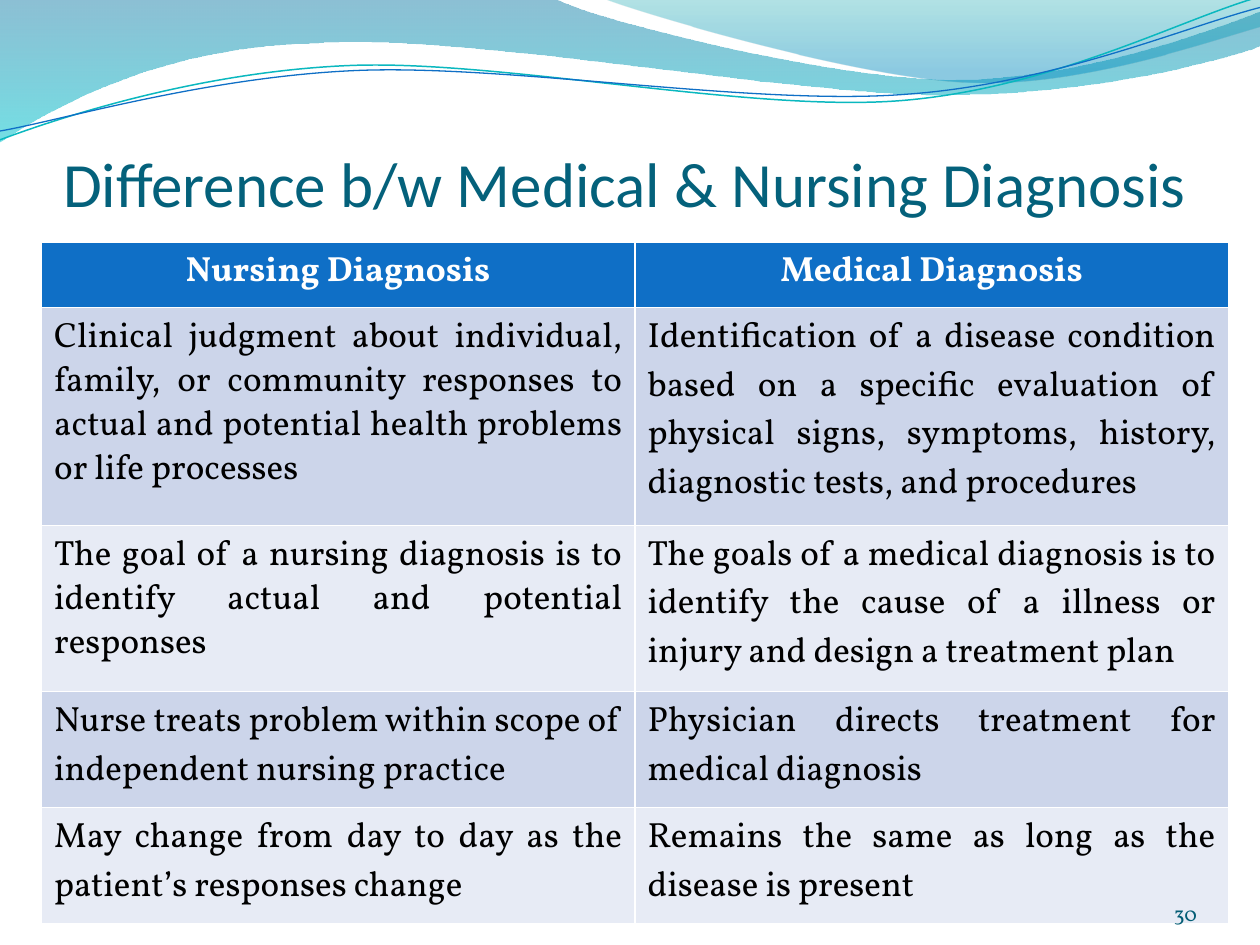
from math import cos, radians, sin

from lxml.etree import SubElement
from pptx import Presentation
from pptx.dml.color import RGBColor
from pptx.enum.text import MSO_ANCHOR, MSO_AUTO_SIZE, PP_ALIGN
from pptx.oxml import parse_xml
from pptx.oxml.ns import nsdecls, qn
from pptx.util import Inches, Pt

COLORS = {
    "title": "04617B", "header": "0F6FC6", "odd": "CCD5EA", "even": "E7EBF5",
    "white": "FFFFFF", "black": "000000", "number": "045D75",
    "teal_line": "0AB8BF", "blue_line": "0F6FC6",
    "deep": "0074A1", "aqua": "00C6CF", "sea": "00A1A9", "sky": "008BBF",
}

LEFT_WAVE = [
    (0, 0), (4.4, -0.01), (4.76, 0.17, 6.64, 0.63, 7.58, 0.63),
    (8.53, 0.63, 9.58, 0.26, 10, 0.09), (10.01, 0.36),
    (9.83, 0.44, 8.7, 0.76, 7.46, 0.75), (6.22, 0.75, 3.82, 0.28, 2.57, 0.34),
    (1.29, 0.36, 0.46, 0.83, -0.01, 1.13), (0, 0),
]
RIGHT_WAVE = [
    (4.79, -0.01), (5.09, 0.11, 6.82, 0.62, 7.69, 0.65),
    (8.56, 0.69, 9.61, 0.32, 10, 0.21), (10, 0), (4.79, -0.01),
]
TEAL_CURVE = [
    (0, 1.11), (0.48, 0.93, 1.58, 0.57, 2.77, 0.52),
    (3.95, 0.47, 5.93, 0.89, 7.13, 0.8), (8.33, 0.71, 9.38, 0.15, 9.98, -0.02),
]
BLUE_CURVE = [
    (0, 1.04), (0.47, 0.96, 1.64, 0.61, 2.83, 0.56),
    (4.03, 0.51, 5.97, 0.84, 7.17, 0.75), (8.36, 0.67, 9.41, 0.21, 10, 0.06),
]
CURVE_TILT = 2.7

HEADINGS = ["Nursing Diagnosis", "Medical Diagnosis"]
COMPARISONS = [
    ["Clinical judgment about individual, family, or community responses to actual and potential health problems or life processes",
     "Identification of a disease condition based on a specific evaluation of physical signs, symptoms, history, diagnostic tests, and procedures"],
    ["The goal of a nursing diagnosis is to identify actual and potential responses",
     "The goals of a medical diagnosis is to identify the cause of a illness or injury and design a treatment plan"],
    ["Nurse treats problem within scope of independent nursing practice",
     "Physician directs treatment for medical diagnosis"],
    ["May change from day to day as the patient’s responses change",
     "Remains the same as long as the disease is present"],
]
ROW_HEIGHTS = [0.52, 1.73, 1.32, 0.92, 0.92]
TIGHT_CELLS = {(1, 0), (2, 0)}


def turn(point, center, degrees):
    angle = radians(degrees)
    across, down = point[0] - center[0], point[1] - center[1]
    return (center[0] + across * cos(angle) - down * sin(angle),
            center[1] + across * sin(angle) + down * cos(angle))


class SlideBuilder:
    body_font = "Vollkorn"
    title_font = "Calibri"

    def __init__(self, slide):
        self.slide = slide

    def format_paragraph(self, paragraph, font, size, color, align, bold=False):
        paragraph.alignment = align
        paragraph.font.name = font
        paragraph.font.size = Pt(size)
        paragraph.font.bold = bold
        paragraph.font.color.rgb = RGBColor.from_string(COLORS[color])

    def format_frame(self, frame, top_inset=0):
        frame.word_wrap = True
        frame.auto_size = MSO_AUTO_SIZE.NONE
        frame.vertical_anchor = MSO_ANCHOR.BOTTOM
        frame.margin_left = frame.margin_right = frame.margin_bottom = 0
        frame.margin_top = Inches(top_inset)

    def freeform(self, segments, close, center=(0, 0), tilt=0):
        points = [turn(segment[i:i + 2], center, tilt)
                  for segment in segments for i in range(0, len(segment), 2)]
        points = [(Inches(x), Inches(y)) for x, y in points]
        builder = self.slide.shapes.build_freeform(*points[0])
        builder.add_line_segments(points[1:], close=close)
        shape = builder.convert_to_shape()
        shape.shadow.inherit = False
        shape.rotation = -tilt
        lines = iter(list(shape.element.spPr.iter(qn("a:lnTo"))))
        for segment in segments[1:]:
            line = next(lines)
            if len(segment) == 6:
                bezier = parse_xml(f'<a:cubicBezTo {nsdecls("a")}/>')
                line.addprevious(bezier)
                for part in (line, next(lines), next(lines)):
                    bezier.append(part[0])
                    part.getparent().remove(part)
        return shape

    def wave(self, segments, stops):
        shape = self.freeform(segments, True)
        shape.line.fill.background()
        gradient = parse_xml(
            f'<a:gradFill {nsdecls("a")} rotWithShape="1"><a:gsLst/>'
            '<a:lin ang="5400000" scaled="0"/></a:gradFill>')
        for position, color, opacity in stops:
            stop = SubElement(gradient[0], qn("a:gs"), pos=str(position * 1000))
            tint = SubElement(stop, qn("a:srgbClr"), val=COLORS[color])
            SubElement(tint, qn("a:alpha"), val=str(opacity * 1000))
        shape.element.spPr.find(qn("a:custGeom")).addnext(gradient)

    def curve(self, segments, center, color, width):
        shape = self.freeform(segments, False, center, CURVE_TILT)
        shape.fill.background()
        shape.line.color.rgb = RGBColor.from_string(COLORS[color])
        shape.line.width = Pt(width)

    def title(self, text):
        shape = self.slide.shapes.title
        shape.left, shape.top = Inches(0.5), Inches(0.5)
        shape.width, shape.height = Inches(9), Inches(1.25)
        self.format_frame(shape.text_frame, 0.05)
        shape.text_frame.text = text
        self.format_paragraph(shape.text_frame.paragraphs[0], self.title_font, 36,
                              "title", PP_ALIGN.LEFT)

    def table(self, rows, left, top, width):
        table = self.slide.shapes.add_table(
            len(rows), len(rows[0]), Inches(left), Inches(top), Inches(width),
            Inches(sum(ROW_HEIGHTS))).table
        for row_index, texts in enumerate(rows):
            table.rows[row_index].height = Inches(ROW_HEIGHTS[row_index])
            is_header = row_index == 0
            fill = "header" if is_header else ("even", "odd")[row_index % 2]
            for column_index, text in enumerate(texts):
                cell = table.cell(row_index, column_index)
                cell.text = text
                cell.fill.solid()
                cell.fill.fore_color.rgb = RGBColor.from_string(COLORS[fill])
                paragraph = cell.text_frame.paragraphs[0]
                self.format_paragraph(
                    paragraph, self.body_font, 20, "white" if is_header else "black",
                    PP_ALIGN.CENTER if is_header else PP_ALIGN.JUSTIFY, is_header)
                if (row_index, column_index) in TIGHT_CELLS:
                    paragraph.line_spacing = 0.9

    def page_number(self, text):
        shape = self.slide.shapes.add_textbox(
            Inches(8.67), Inches(6.95), Inches(0.83), Inches(0.4))
        self.format_frame(shape.text_frame)
        shape.text_frame.text = text
        self.format_paragraph(shape.text_frame.paragraphs[0], self.body_font, 12,
                              "number", PP_ALIGN.RIGHT)


def main():
    presentation = Presentation()
    presentation.slide_width, presentation.slide_height = Inches(10), Inches(7.5)
    builder = SlideBuilder(presentation.slides.add_slide(presentation.slide_layouts[5]))
    builder.wave(LEFT_WAVE, [(0, "deep", 45), (100, "aqua", 55)])
    builder.wave(RIGHT_WAVE, [(0, "sea", 30), (80, "sky", 45)])
    builder.curve(TEAL_CURVE, (4.99, 0.57), "teal_line", 0.85)
    builder.curve(BLUE_CURVE, (5, 0.59), "blue_line", 0.75)
    builder.title("Difference b/w Medical & Nursing Diagnosis")
    builder.table([HEADINGS] + COMPARISONS, 0.33, 1.92, 9.42)
    builder.page_number("30")
    presentation.save("out.pptx")


if __name__ == "__main__":
    main()
